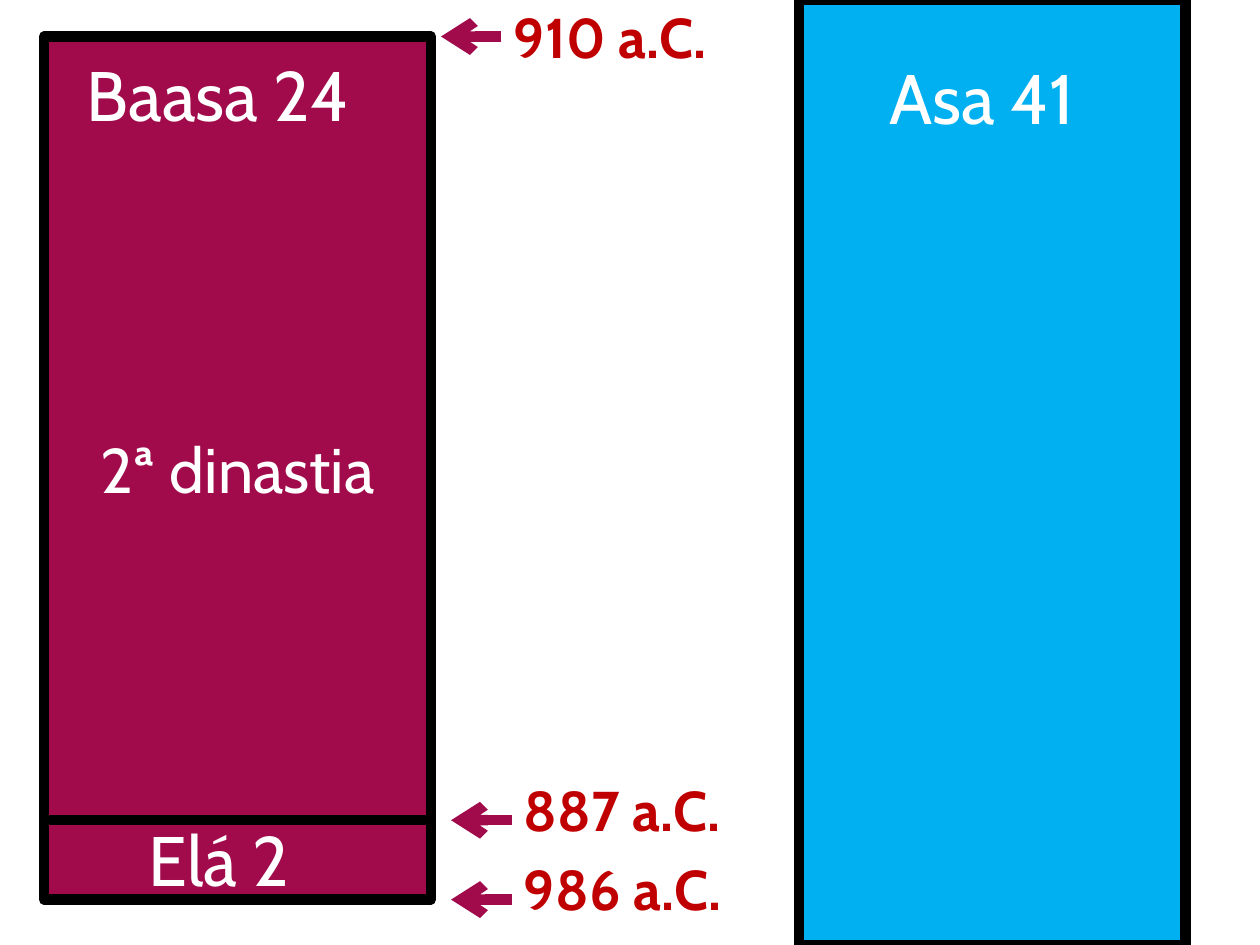
from collections import namedtuple

from lxml import etree
from pptx import Presentation, util as u
from pptx.dml.color import RGBColor
from pptx.enum import shapes, text
from pptx.oxml import ns

# The page is a grid of 100 columns by 75 rows.
COLUMNS, ROWS = 100, 75
CELL = u.Inches(0.1)

BLACK = RGBColor(0x00, 0x00, 0x00)
WHITE = RGBColor(0xFF, 0xFF, 0xFF)
WINE = RGBColor(0xA1, 0x0B, 0x4B)
SKY = RGBColor(0x00, 0xB0, 0xF0)
RED = RGBColor(0xC0, 0x00, 0x00)

LINE_WIDTH = u.Pt(6)
NAME = {"name": "Cabin", "size": u.Pt(40)}
DYNASTY = {"name": "Cabin", "size": u.Pt(36)}
YEAR = {"name": "Cabin", "size": u.Pt(32), "bold": True}
NAME_HEIGHT, YEAR_HEIGHT = 7.7, 6.4
ARROW_LENGTH = 4.8

Box = namedtuple("Box", "left top width height")


def cells(*counts):
    return [round(count * CELL) for count in counts]


def write(frame, words, style, color):
    para = frame.paragraphs[0]
    span = para.add_run()
    span.text = words
    for key, value in style.items():
        setattr(span.font, key, value)
    span.font.color.rgb = color
    return para


def add_label(page, box, words, style, color):
    frame = page.shapes.add_textbox(*cells(*box)).text_frame
    frame.word_wrap = False
    frame.auto_size = text.MSO_AUTO_SIZE.SHAPE_TO_FIT_TEXT
    write(frame, words, style, color)


def add_line(page, start, end, color, arrow=False):
    line = page.shapes.add_connector(
        shapes.MSO_CONNECTOR.STRAIGHT, *cells(*start, *end))
    line.line.width = LINE_WIDTH
    line.line.color.rgb = color
    if arrow:
        etree.SubElement(line.line._get_or_add_ln(), ns.qn("a:tailEnd"), type="arrow")
    etree.SubElement(line._element.spPr, ns.qn("a:effectLst"))


def add_bar(page, box, color):
    bar = page.shapes.add_shape(shapes.MSO_SHAPE.RECTANGLE, *cells(*box))
    bar.shadow.inherit = False
    bar.fill.solid()
    bar.fill.fore_color.rgb = color
    bar.line.color.rgb = BLACK
    bar.line.width = LINE_WIDTH
    return bar


def add_dynasty(page, box, split):
    """Bar of the northern kings, divided at a row counted from its top."""
    frame = add_bar(page, box, WINE).text_frame
    frame.vertical_anchor = text.MSO_ANCHOR.MIDDLE
    write(frame, "2ª dinastia", DYNASTY, WHITE).alignment = text.PP_ALIGN.CENTER
    border = box.top + split
    add_line(page, (box.left, border), (box.left + box.width, border), BLACK)
    for words, left, top, width in (("Baasa 24", 2.4, 0.7, 24.9),
                                    ("Elá 2", 7.3, split - 0.8, 14)):
        add_label(page, Box(box.left + left, box.top + top, width, NAME_HEIGHT),
                  words, NAME, WHITE)


def add_reign(page, box, words):
    add_bar(page, box, SKY)
    add_label(page, Box(box.left + 6.2, box.top + 3.8, 18.2, NAME_HEIGHT),
              words, NAME, WHITE)


def add_years(page, box, marks):
    """Years with arrows pointing left; each mark is year, row, indent, label rise."""
    for words, row, indent, rise in marks:
        tip = box.left + indent
        tail = tip + ARROW_LENGTH
        level = box.top + row
        add_line(page, (tail, level), (tip, level), WINE, arrow=True)
        add_label(page, Box(tail, level - rise, box.width, YEAR_HEIGHT),
                  words, YEAR, RED)


def main():
    deck = Presentation()
    deck.slide_width, deck.slide_height = cells(COLUMNS, ROWS)
    page = deck.slides.add_slide(deck.slide_layouts[6])

    dynasty = Box(3.5, 2.9, 30.7, 68.5)
    split = 62.2
    add_dynasty(page, dynasty, split)
    add_reign(page, Box(63.4, 0, dynasty.width, ROWS), "Asa 41")
    add_years(page, Box(35, dynasty.top, 18.1, dynasty.height),
              (("910 a.C.", 0, 0, 3.2),
               ("887 a.C.", split, 0.8, 4),
               ("986 a.C.", dynasty.height, 0.8, 4.1)))
    deck.save("out.pptx")


if __name__ == "__main__":
    main()
